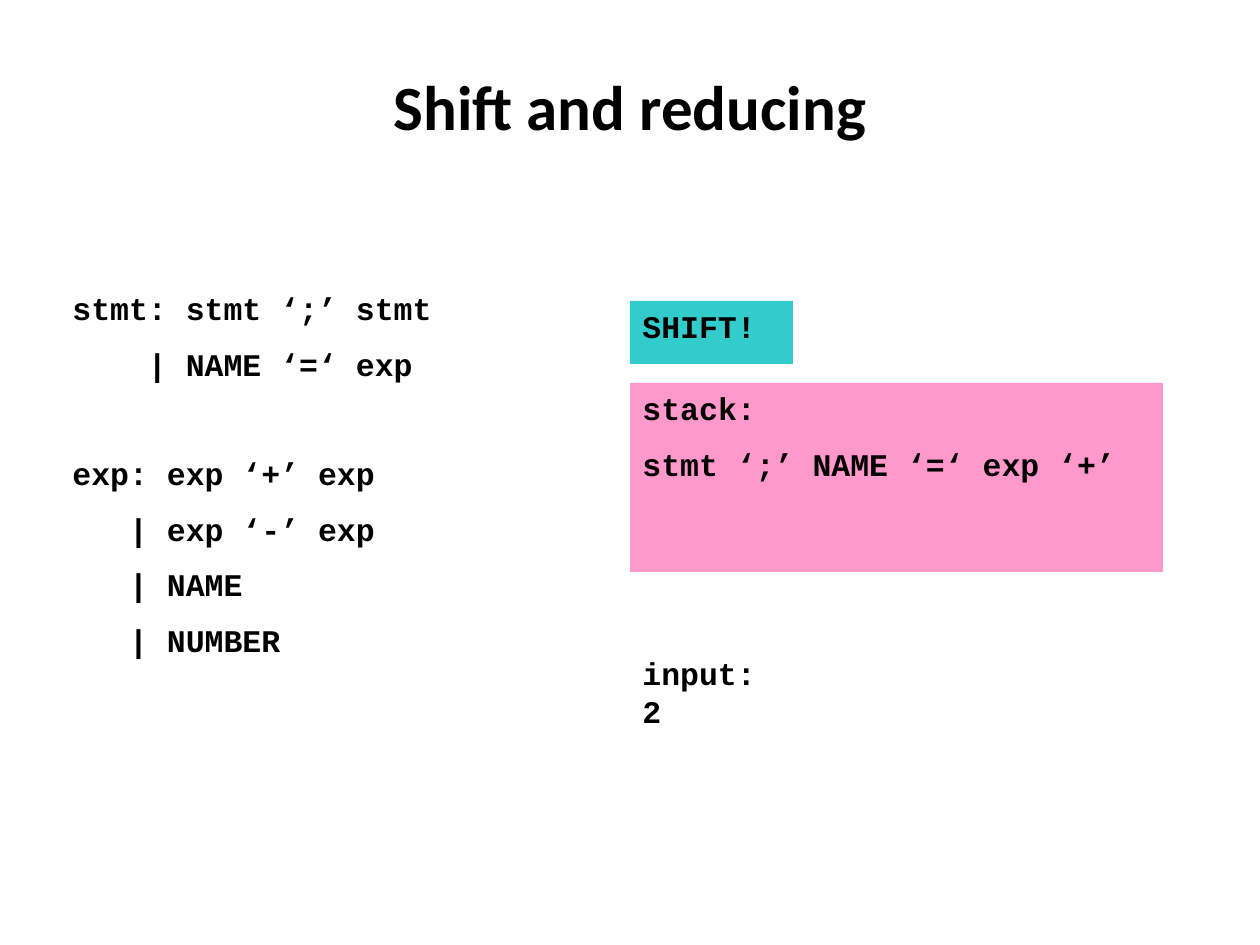
from pptx import Presentation
from pptx import util as u
from pptx.dml.color import RGBColor
from pptx.enum import shapes, text

SCALE = 914400 / 126
CODE_FONT = "Courier New"
CODE_SIZE = 18
CHARACTER_WIDTH = 0.6 * CODE_SIZE
PARAGRAPH_GAP = 10.2
BLOCK_GAP = 40.8


def px(length):
    return round(length * SCALE)


def box_emu(box):
    return [px(length) for length in box]


def color(hex_string):
    return RGBColor.from_string(hex_string)


def add_run(paragraph, words, font_name, size):
    run = paragraph.add_run()
    run.text = words
    run.font.name = font_name
    run.font.size = u.Pt(size)
    run.font.bold = True
    run.font.color.rgb = color("000000")


def write_code(shape, lines):
    frame = shape.text_frame
    frame.word_wrap = True
    frame.vertical_anchor = text.MSO_ANCHOR.TOP
    for index, (words, indent, gap) in enumerate(lines):
        paragraph = frame.paragraphs[0] if index == 0 else frame.add_paragraph()
        paragraph.alignment = text.PP_ALIGN.LEFT
        paragraph.space_before = u.Pt(gap)
        properties = paragraph._p.get_or_add_pPr()
        properties.set("marL", str(u.Pt(indent * CHARACTER_WIDTH)))
        properties.set("indent", "0")
        add_run(paragraph, words, CODE_FONT, CODE_SIZE)


def add_title(slide, box, words):
    title = slide.shapes.title
    title.left, title.top, title.width, title.height = box_emu(box)
    frame = title.text_frame
    frame.vertical_anchor = text.MSO_ANCHOR.MIDDLE
    paragraph = frame.paragraphs[0]
    paragraph.alignment = text.PP_ALIGN.CENTER
    add_run(paragraph, words, "Calibri", 36)


def add_code_text(slide, box, lines):
    write_code(slide.shapes.add_textbox(*box_emu(box)), lines)


def add_code_panel(slide, box, fill, lines):
    panel = slide.shapes.add_shape(shapes.MSO_SHAPE.RECTANGLE, *box_emu(box))
    panel.shadow.inherit = False
    panel.fill.solid()
    panel.fill.fore_color.rgb = color(fill)
    panel.line.fill.background()
    write_code(panel, lines)


def add_grammar(slide, box):
    add_code_text(slide, box, [
        ("stmt: stmt ‘;’ stmt", 0, 0),
        ("| NAME ‘=‘ exp", 4, PARAGRAPH_GAP),
        ("exp: exp ‘+’ exp", 0, BLOCK_GAP),
        ("| exp ‘-’ exp", 3, PARAGRAPH_GAP),
        ("| NAME", 3, PARAGRAPH_GAP),
        ("| NUMBER", 3, PARAGRAPH_GAP),
    ])


def add_parser_state(slide, box):
    left, top, width, height = box
    label_width = 163
    add_code_text(slide, (left, top + 347, label_width, height - 347),
                  [("input:", 0, 0), ("2", 0, 0)])
    add_code_panel(slide, (left, top + 82, width, 189), "FF99CC", [
        ("stack:", 0, 0),
        ("stmt ‘;’ NAME ‘=‘ exp ‘+’", 0, PARAGRAPH_GAP),
    ])
    add_code_panel(slide, (left, top, label_width, 63), "33CCCC",
                   [("SHIFT!", 0, 0)])


def main():
    presentation = Presentation()
    presentation.slide_width = px(1260)
    presentation.slide_height = px(945)
    slide = presentation.slides.add_slide(presentation.slide_layouts[5])
    add_title(slide, (63, 38, 1134, 135), "Shift and reducing")
    add_grammar(slide, (60, 283, 514, 515))
    add_parser_state(slide, (630, 301, 533, 460))
    presentation.save("out.pptx")


if __name__ == "__main__":
    main()
